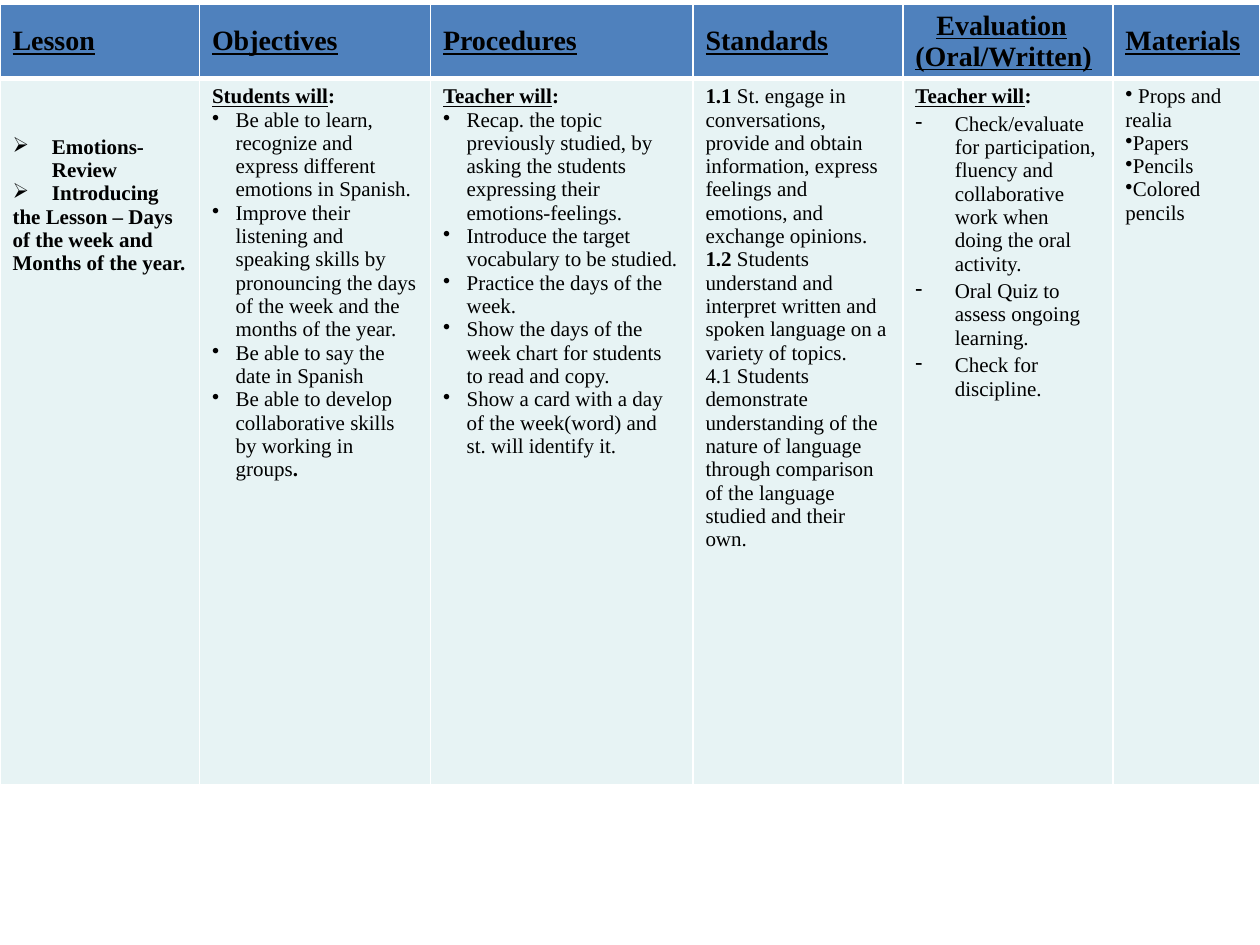
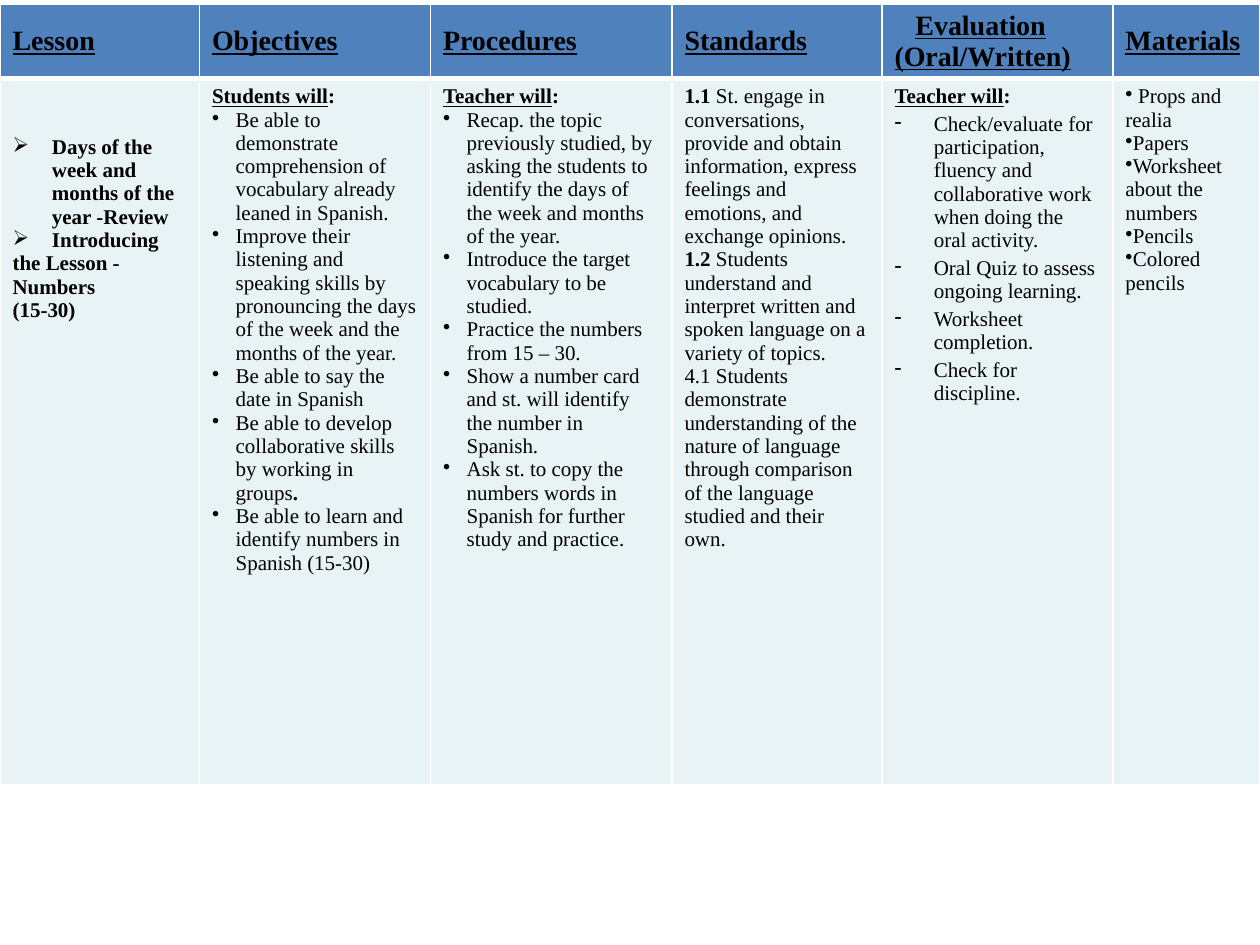
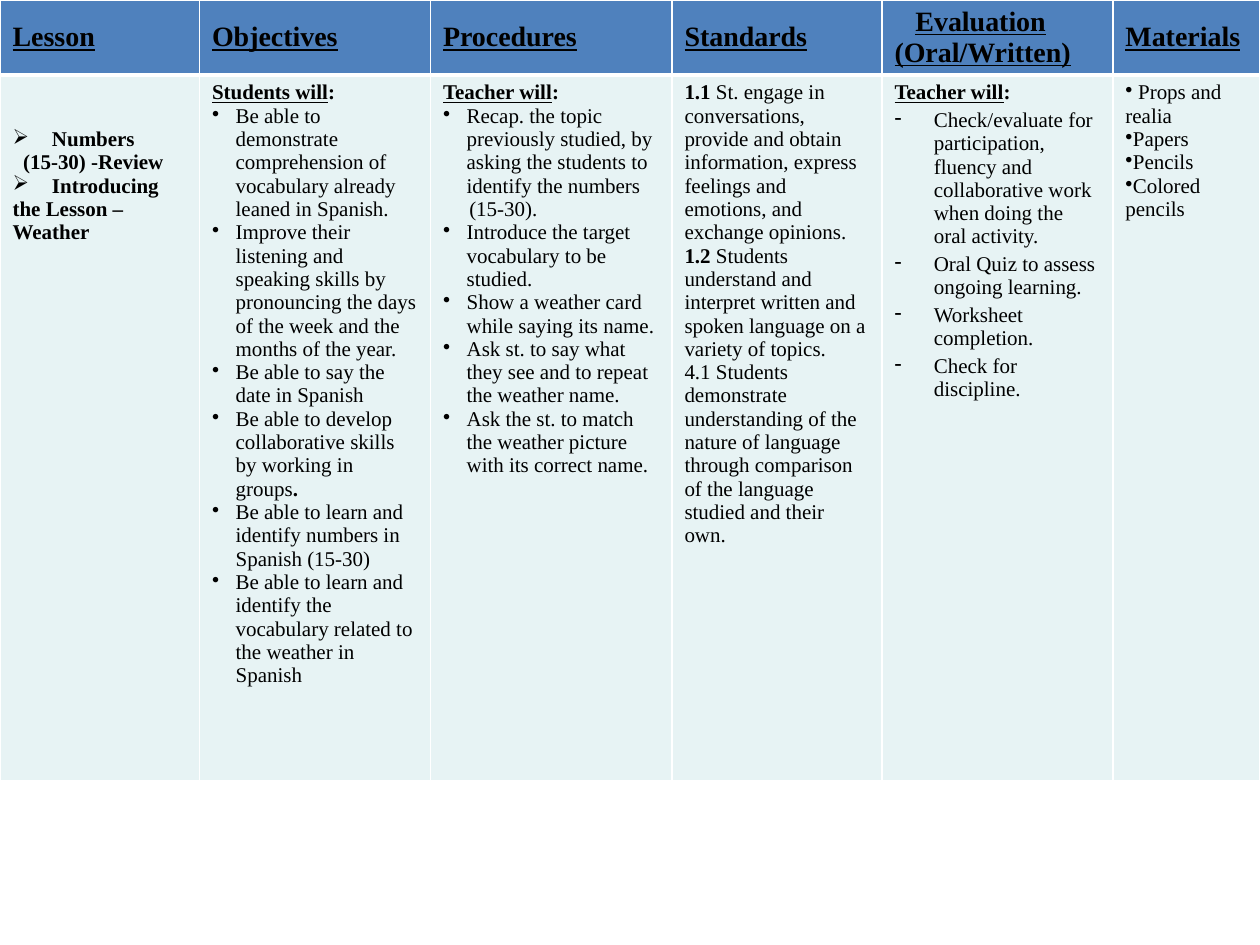
from dataclasses import dataclass

from lxml import etree
from pptx import Presentation
from pptx.dml.color import RGBColor
from pptx.enum.text import MSO_ANCHOR
from pptx.oxml.ns import qn
from pptx.util import Pt

TOP, MIDDLE = MSO_ANCHOR.TOP, MSO_ANCHOR.MIDDLE

COLORS = {"header": "4F81BD", "body": "E7F3F4", "rule": "FFFFFF", "text": "000000"}
FONT = "Times New Roman"
HEADER_SIZE, BODY_SIZE = 16, 12
HEADER_HEIGHT, BODY_HEIGHT = 39.6, 403.2
THIN, THICK = 1, 3
CELL_MARGIN = 3.6
HEADINGS = ["Lesson", "Objectives", "Procedures", "Standards",
            "Evaluation (Oral/Written)", "Materials"]
EVALUATION_INDENT = 12


@dataclass
class Line:
    runs: list
    marker: str = ""
    margin: float = 0
    indent: float = 0
    before: float = 0


def plain(text, style="", indent=0):
    return Line([(text, style)], indent=indent)


def dot(text, *more):
    return Line([(text, ""), *more], "•", 13.5, -13.5)


def dash(text):
    return Line([(text, "")], "-", 22.5, -22.5, 2.4)


def arrow(text):
    return Line([(text, "b")], "➢", 22.5, -22.5)


def supply(text):
    return Line([(text, "")], "•")


def lead(text):
    return Line([(text, "bu"), (":", "b")])


STANDARDS = [
    Line([("1.1", "b"), (" St. engage in conversations, provide and obtain information, "
                         "express feelings and emotions, and exchange opinions.", "")]),
    Line([("1.2", "b"), (" Students understand and interpret written and spoken language "
                         "on a variety of topics.", "")]),
    plain("4.1 Students demonstrate understanding of the nature of language through "
          "comparison of the language studied and their own."),
]
SHARED_OBJECTIVES = [
    dot("Improve their listening and speaking skills by pronouncing the days of the week "
        "and the months of the year."),
    dot("Be able to say the date in Spanish"),
    dot("Be able to develop collaborative skills by working in groups", (".", "b")),
]
REVIEW_OBJECTIVES = [
    dot("Be able to demonstrate comprehension of vocabulary already leaned in Spanish."),
    *SHARED_OBJECTIVES,
    dot("Be able to learn and identify numbers in Spanish (15-30)"),
]
VOCABULARY = dot("Introduce the target vocabulary to be studied.")


def evaluation(*extra):
    return [
        lead("Teacher will"),
        dash("Check/evaluate for participation, fluency and collaborative work when doing "
             "the oral activity."),
        dash("Oral Quiz to assess ongoing learning."),
        *map(dash, extra),
        dash("Check for discipline."),
    ]


def materials(*extra):
    return [supply(item) for item in
            (" Props and realia", "Papers", *extra, "Pencils", "Colored pencils")]


@dataclass
class Plan:
    top: float
    height: float
    widths: list
    lesson_drop: float
    lesson: list
    objectives: list
    procedures: list
    evaluation: list
    materials: list

    def columns(self):
        return [self.lesson, [lead("Students will"), *self.objectives],
                [lead("Teacher will"), *self.procedures],
                STANDARDS, self.evaluation, self.materials]


EVEN_WIDTHS = [114, 132, 150, 120, 120, 84]
WIDE_EVALUATION = [114, 132, 138, 120, 132, 84]

PLANS = [
    Plan(
        2.2, 600, EVEN_WIDTHS, 28.8,
        [arrow("Emotions-Review"), arrow("Introducing"),
         plain("the Lesson – Days of the week and Months of the year.", "b")],
        [dot("Be able to learn, recognize and express different emotions in Spanish."),
         *SHARED_OBJECTIVES],
        [dot("Recap. the topic previously studied, by asking the students expressing "
             "their emotions-feelings."),
         VOCABULARY,
         dot("Practice the days of the week."),
         dot("Show the days of the week chart for students to read and copy."),
         dot("Show a card with a day of the week(word) and st. will identify it.")],
        evaluation(), materials(),
    ),
    Plan(
        2.2, 657.4, WIDE_EVALUATION, 28.8,
        [arrow("Days of the week and months of the year -Review"), arrow("Introducing"),
         plain("the Lesson - Numbers", "b"), plain("(15-30)", "b")],
        REVIEW_OBJECTIVES,
        [dot("Recap. the topic previously studied, by asking the students to identify "
             "the days of the week and months of the year."),
         VOCABULARY,
         dot("Practice the numbers from 15 – 30."),
         dot("Show a number card and st. will identify the number in Spanish."),
         dot("Ask st. to copy the numbers words in Spanish for further study and "
             "practice.")],
        evaluation("Worksheet completion."), materials("Worksheet about the numbers"),
    ),
    Plan(
        0, 729.4, WIDE_EVALUATION, 26.6,
        [arrow("Numbers"), plain("(15-30) -Review", "b", 6), arrow("Introducing"),
         plain("the Lesson –", "b"), plain("Weather", "b")],
        [*REVIEW_OBJECTIVES,
         dot("Be able to learn and identify the vocabulary related to the weather in "
             "Spanish")],
        [dot("Recap. the topic previously studied, by asking the students to identify "
             "the numbers"),
         plain("(15-30).", indent=15),
         VOCABULARY,
         dot("Show a weather card while saying its name."),
         dot("Ask st. to say what they see and to repeat the weather name."),
         dot("Ask the st. to match the weather picture with its correct name.")],
        evaluation("Worksheet completion."), materials(),
    ),
]


def rgb(name):
    return RGBColor.from_string(COLORS[name])


def add_border(cell, side, width):
    properties = cell._tc.get_or_add_tcPr()
    rule = etree.SubElement(properties, qn(f"a:ln{side}"), w=str(Pt(width)))
    solid = etree.SubElement(rule, qn("a:solidFill"))
    etree.SubElement(solid, qn("a:srgbClr"), val=COLORS["rule"])


def write_line(paragraph, line, size):
    properties = paragraph._p.get_or_add_pPr()
    properties.set("marL", str(Pt(line.margin)))
    properties.set("indent", str(Pt(line.indent)))
    paragraph.space_before = Pt(line.before)
    if line.marker:
        etree.SubElement(properties, qn("a:buChar"), char=line.marker)
    else:
        etree.SubElement(properties, qn("a:buNone"))
    for text, style in line.runs:
        run = paragraph.add_run()
        run.text = text
        run.font.name = FONT
        run.font.size = Pt(size)
        run.font.bold = "b" in style
        run.font.underline = "u" in style
        run.font.color.rgb = rgb("text")


def fill_cell(cell, lines, size, color, top_rule, bottom_rule):
    for side, width in zip("LRTB", (THIN, THIN, top_rule, bottom_rule)):
        add_border(cell, side, width)
    cell.fill.solid()
    cell.fill.fore_color.rgb = rgb(color)
    frame = cell.text_frame
    for index, line in enumerate(lines):
        paragraph = frame.add_paragraph() if index else frame.paragraphs[0]
        write_line(paragraph, line, size)


def add_plan(slide, plan):
    frame = slide.shapes.add_table(2, len(HEADINGS), Pt(0), Pt(plan.top),
                                   Pt(sum(plan.widths)), Pt(plan.height))
    table = frame.table
    for row, height in zip(table.rows, (HEADER_HEIGHT, BODY_HEIGHT)):
        row.height = Pt(height)
    for column, width in zip(table.columns, plan.widths):
        column.width = Pt(width)
    frame.height = Pt(plan.height)

    for index, (heading, lines) in enumerate(zip(HEADINGS, plan.columns())):
        is_evaluation = heading.startswith("Evaluation")
        title = plain(heading, "bu", EVALUATION_INDENT if is_evaluation else 0)
        header = table.cell(0, index)
        fill_cell(header, [title], HEADER_SIZE, "header", THIN, THICK)
        header.vertical_anchor = TOP if is_evaluation else MIDDLE
        fill_cell(table.cell(1, index), lines, BODY_SIZE, "body", THICK, THIN)
    table.cell(1, 0).margin_top = Pt(CELL_MARGIN + plan.lesson_drop)


def main():
    deck = Presentation()
    deck.slide_width, deck.slide_height = Pt(720), Pt(540)
    blank = deck.slide_layouts[6]
    for plan in PLANS:
        add_plan(deck.slides.add_slide(blank), plan)
    deck.save("out.pptx")


if __name__ == "__main__":
    main()
